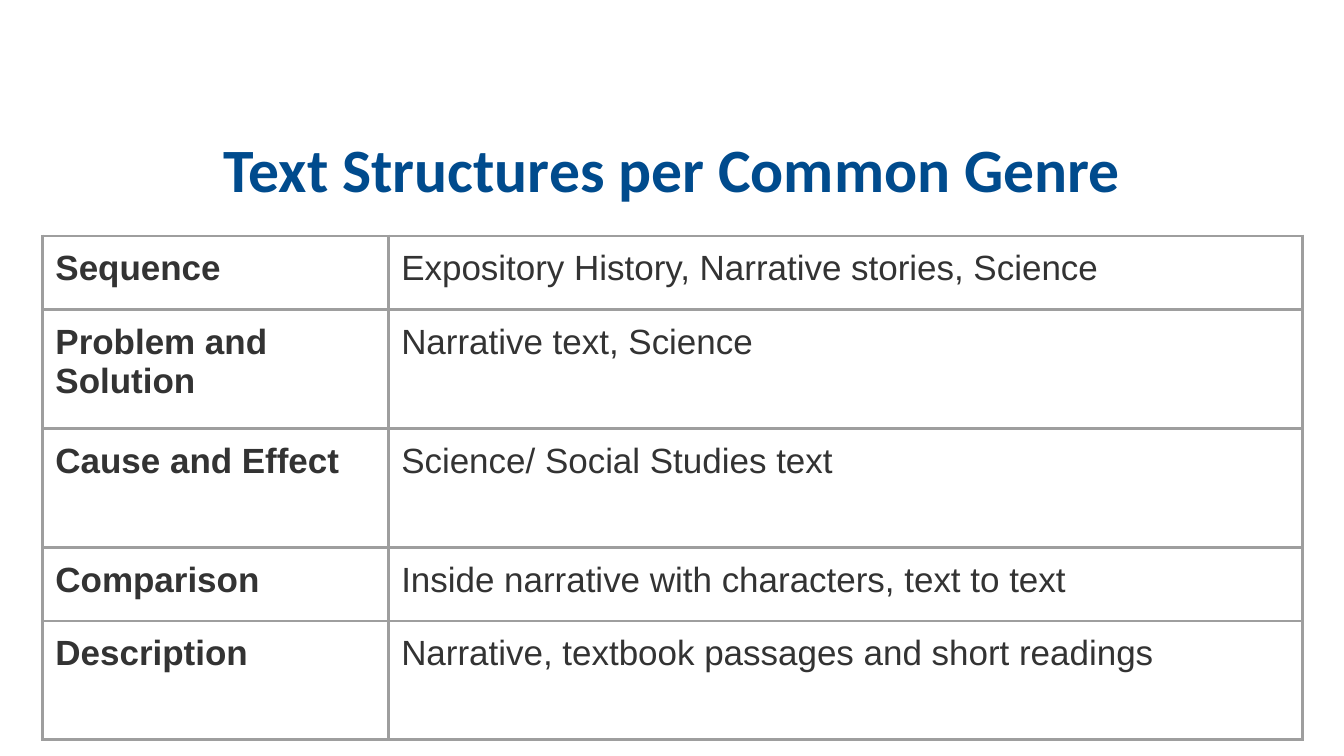
from pptx import Presentation, util as u
from pptx.dml.color import RGBColor
from pptx.enum import text
from pptx.oxml import parse_xml
from pptx.oxml.ns import nsdecls


def style(font, tint, **form):
    font.color.rgb = RGBColor.from_string(tint)
    for key, val in form.items():
        setattr(font, key, val)


def edge(cell, side):
    cell._tc.get_or_add_tcPr().append(parse_xml(
        f'<a:{side} {nsdecls("a")} w="{u.Pt(2.25)}"><a:solidFill>'
        f'<a:srgbClr val="9E9E9E"/></a:solidFill></a:{side}>'))


deck = Presentation()
deck.slide_width, deck.slide_height = u.Inches(13.33), u.Inches(7.5)
slide = deck.slides.add_slide(deck.slide_layouts[5])
left, width = u.Inches(0.42), u.Inches(12.5)

title = slide.shapes.title
place = dict(left=left, top=u.Inches(1.08), width=width, height=u.Inches(1.17))
for key, val in place.items():
    setattr(title, key, val)
frame = title.text_frame
frame.text = "Text Structures per Common Genre"
inset = dict(margin_left=0.13, margin_right=0.13, margin_top=0.07, margin_bottom=0.07)
for key, val in inset.items():
    setattr(frame, key, u.Inches(val))
frame.vertical_anchor = text.MSO_ANCHOR.MIDDLE
frame.paragraphs[0].alignment = text.PP_ALIGN.CENTER
style(frame.paragraphs[0].runs[0].font, "004B8D", name="Calibri", size=u.Pt(44), bold=True)

short, tall = 0.73, 1.18
genres = [
    ("Sequence", "Expository History, Narrative stories, Science", short),
    ("Problem and Solution", "Narrative text, Science", tall),
    ("Cause and Effect", "Science/ Social Studies text", tall),
    ("Comparison", "Inside narrative with characters, text to text", short),
    ("Description", "Narrative, textbook passages and short readings", tall),
]
high = u.Inches(sum(row[-1] for row in genres))
table = slide.shapes.add_table(len(genres), 2, left, u.Inches(2.34), width, high).table
table.first_row = table.horz_banding = False
for col, size in zip(table.columns, (3.43, 9.07)):
    col.width = u.Inches(size)

for r, (*words, size) in enumerate(genres):
    table.rows[r].height = u.Inches(size)
    for c, word in enumerate(words):
        cell = table.cell(r, c)
        cell.text = word
        for key in inset:
            setattr(cell, key, u.Inches(0.13))
        for side in ("lnL", "lnR", "lnT", "lnB"):
            edge(cell, side)
        cell.fill.background()
        font = cell.text_frame.paragraphs[0].runs[0].font
        style(font, "333333", name="Arial", size=u.Pt(25), bold=c == 0)

deck.save("out.pptx")
